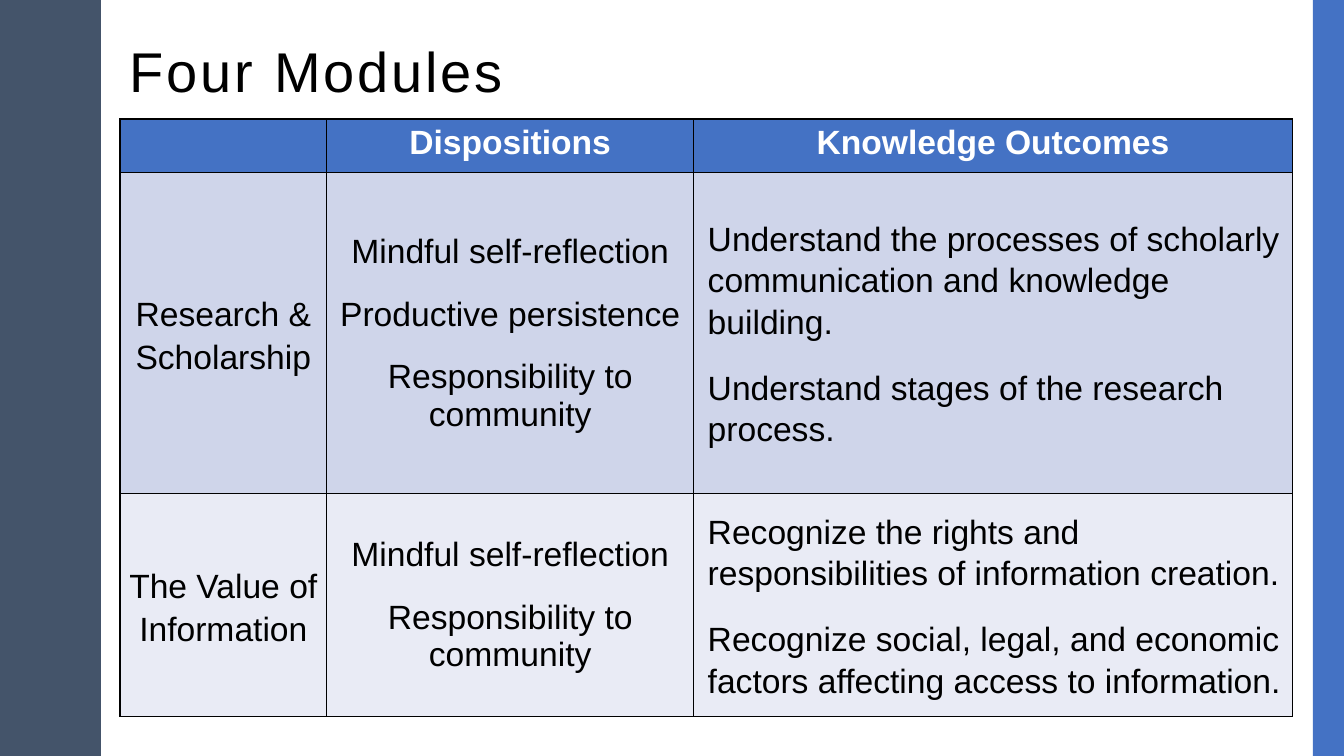
from pptx import Presentation
from pptx.dml.color import RGBColor
from pptx.enum.shapes import MSO_SHAPE
from pptx.enum.text import MSO_ANCHOR, PP_ALIGN
from pptx.oxml import parse_xml
from pptx.oxml.ns import nsdecls
from pptx.util import Inches, Pt

THEME = {
    "font": "Arial",
    "title_size": 40,
    "table_size": 24,
    "text": "000000",
    "header_text": "FFFFFF",
    "wave": "44546A",
    "accent": "4472C4",
    "row_fills": ["4472C4", "CFD5EA", "E9EBF5"],
    "border": "000000",
}


def write_text(frame, *lines, size=THEME["table_size"], color=THEME["text"], bold=False,
               align=PP_ALIGN.CENTER, spacing=1.0, before=0, after=0, indent=0, tracking=0):
    for index, line in enumerate(lines):
        para = frame.add_paragraph() if index else frame.paragraphs[0]
        para.alignment = align
        para.line_spacing = spacing
        para.space_before = Pt(before)
        para.space_after = Pt(after)
        properties = para._p.get_or_add_pPr()
        properties.set("marL", str(Inches(indent)))
        properties.set("indent", "0")
        span = para.add_run()
        span.text = line
        span.font.name = THEME["font"]
        span.font.size = Pt(size)
        span.font.bold = bold
        span.font.color.rgb = RGBColor.from_string(color)
        if tracking:
            span.font._element.set("spc", str(tracking * 100))


def paint(shape, color):
    shape.shadow.inherit = False
    shape.fill.solid()
    shape.fill.fore_color.rgb = RGBColor.from_string(color)
    shape.line.fill.background()


deck = Presentation()
deck.slide_width = Inches(13.33)
deck.slide_height = Inches(7.5)
page = deck.slides.add_slide(deck.slide_layouts[6])

half_wave = [
    (0.78, 0), (0.78, 0.07), (0.79, 0.14), (0.8, 0.2), (0.81, 0.25),
    (0.83, 0.29), (0.85, 0.33), (0.87, 0.38), (0.89, 0.42), (0.91, 0.46),
    (0.93, 0.5), (0.95, 0.55), (0.96, 0.61), (0.97, 0.68), (0.97, 0.75),
]
wave_length = 1.5
full_wave = half_wave + [(x, wave_length - y) for x, y in reversed(half_wave[:-1])]
edge = [(x, y + wave_length * turn) for turn in range(5) for x, y in full_wave]
builder = page.shapes.build_freeform(0, 0, scale=Inches(1))
builder.add_line_segments(edge + [(0, 7.5)], close=True)
paint(builder.convert_to_shape(), THEME["wave"])

right_bar = page.shapes.add_shape(
    MSO_SHAPE.RECTANGLE, Inches(13.02), 0, Inches(0.31), Inches(7.5))
paint(right_bar, THEME["accent"])

title_box = page.shapes.add_textbox(Inches(1.19), Inches(0.3), Inches(11.13), Inches(0.87))
title_box.text_frame.word_wrap = True
title_box.text_frame.vertical_anchor = MSO_ANCHOR.MIDDLE
write_text(title_box.text_frame, "Four Modules", size=THEME["title_size"],
           align=PP_ALIGN.LEFT, spacing=0.9, tracking=2)

rows = [
    [[], ["Dispositions"], ["Knowledge Outcomes"]],
    [
        ["Research & Scholarship"],
        ["Mindful self-reflection", "Productive persistence", "Responsibility to community"],
        ["Understand the processes of scholarly communication and knowledge building.",
         "Understand stages of the research process."],
    ],
    [
        ["The Value of Information"],
        ["Mindful self-reflection", "Responsibility to community"],
        ["Recognize the rights and responsibilities of information creation.",
         "Recognize social, legal, and economic factors affecting access to information."],
    ],
]
header_format = {"color": THEME["header_text"], "bold": True}
column_formats = [
    {"spacing": 1.15},
    {"after": 18},
    {"align": PP_ALIGN.LEFT, "spacing": 1.1, "before": 6, "after": 12, "indent": 0.06},
]

table = page.shapes.add_table(
    3, 3, Inches(1.19), Inches(1.18), Inches(11.63), Inches(5.93)).table
table.horz_banding = False
for column, width in zip(table.columns, [2.05, 3.64, 5.94]):
    column.width = Inches(width)
for row, height in zip(table.rows, [0.53, 3.19, 2.21]):
    row.height = Inches(height)

for row_index, row in enumerate(rows):
    for column_index, lines in enumerate(row):
        cell = table.cell(row_index, column_index)
        cell.fill.solid()
        cell.fill.fore_color.rgb = RGBColor.from_string(THEME["row_fills"][row_index])
        if row_index:
            cell.vertical_anchor = MSO_ANCHOR.MIDDLE
            cell.margin_left = cell.margin_right = Inches(0.08)
            cell.margin_top = cell.margin_bottom = 0
        write_text(cell.text_frame, *lines,
                   **(column_formats[column_index] if row_index else header_format))
        cell_properties = cell._tc.get_or_add_tcPr()
        for position, side in enumerate(["lnL", "lnR", "lnT", "lnB"]):
            cell_properties.insert(position, parse_xml(
                f'<a:{side} {nsdecls("a")} w="{Pt(1)}"><a:solidFill>'
                f'<a:srgbClr val="{THEME["border"]}"/></a:solidFill></a:{side}>'))

deck.save("out.pptx")
